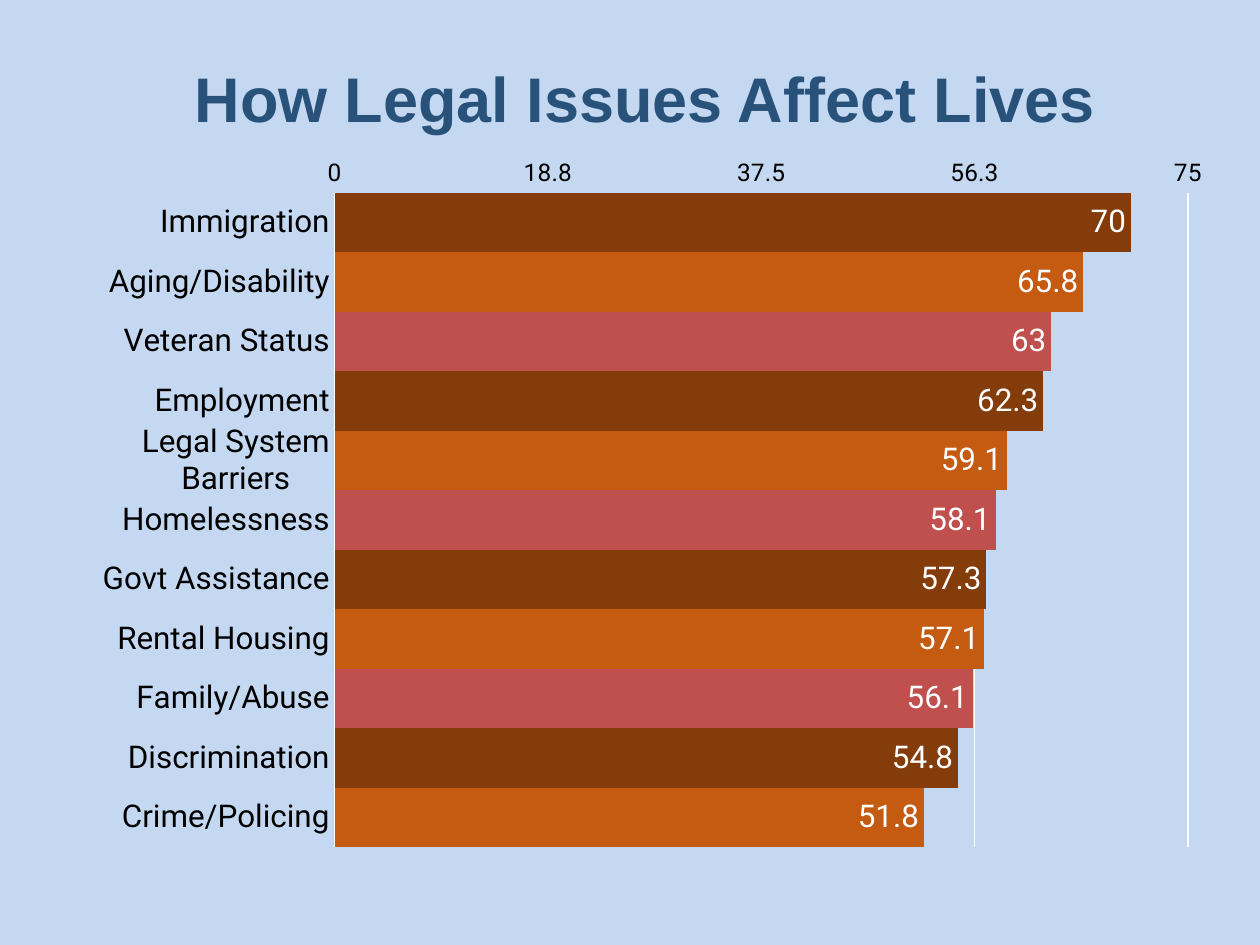
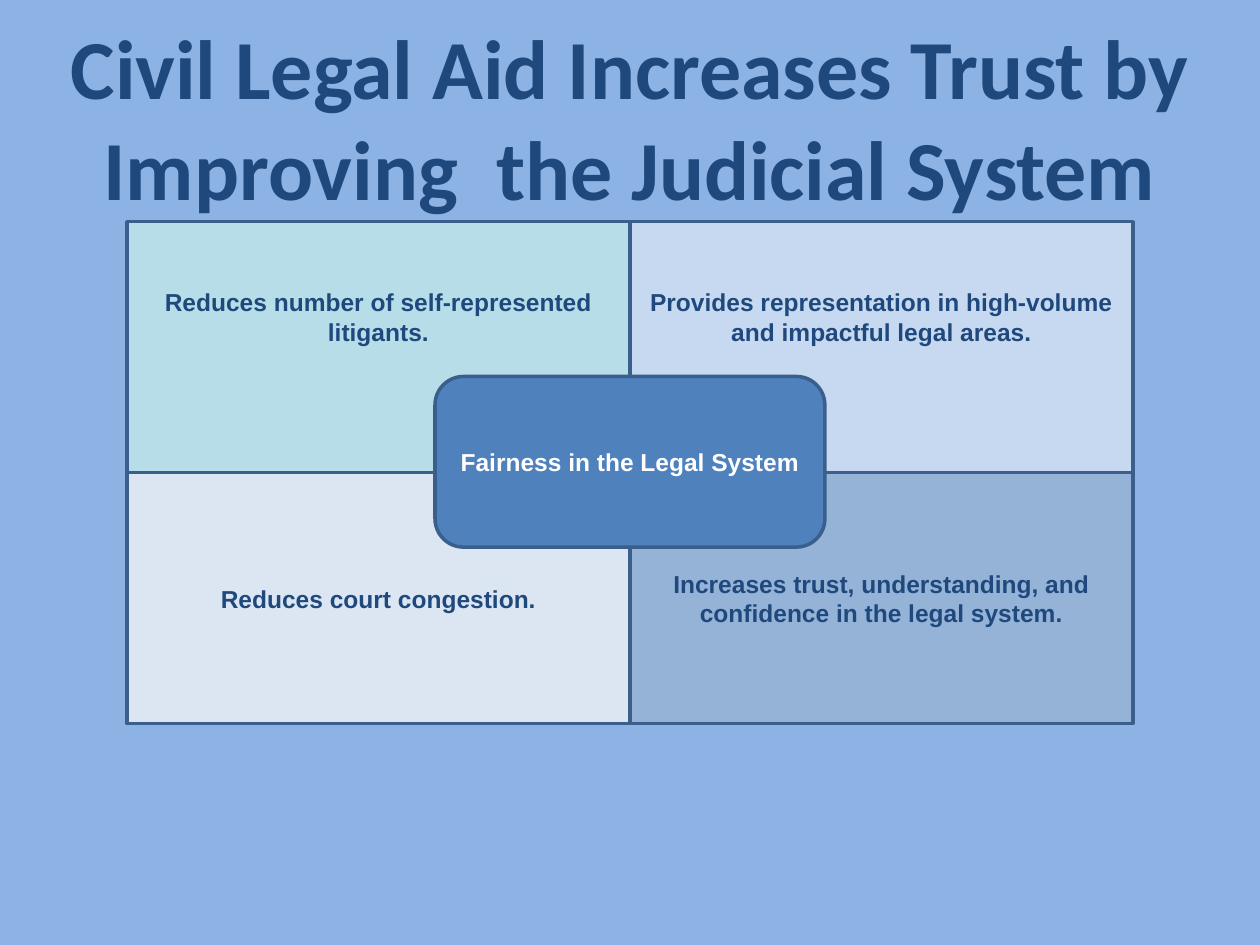
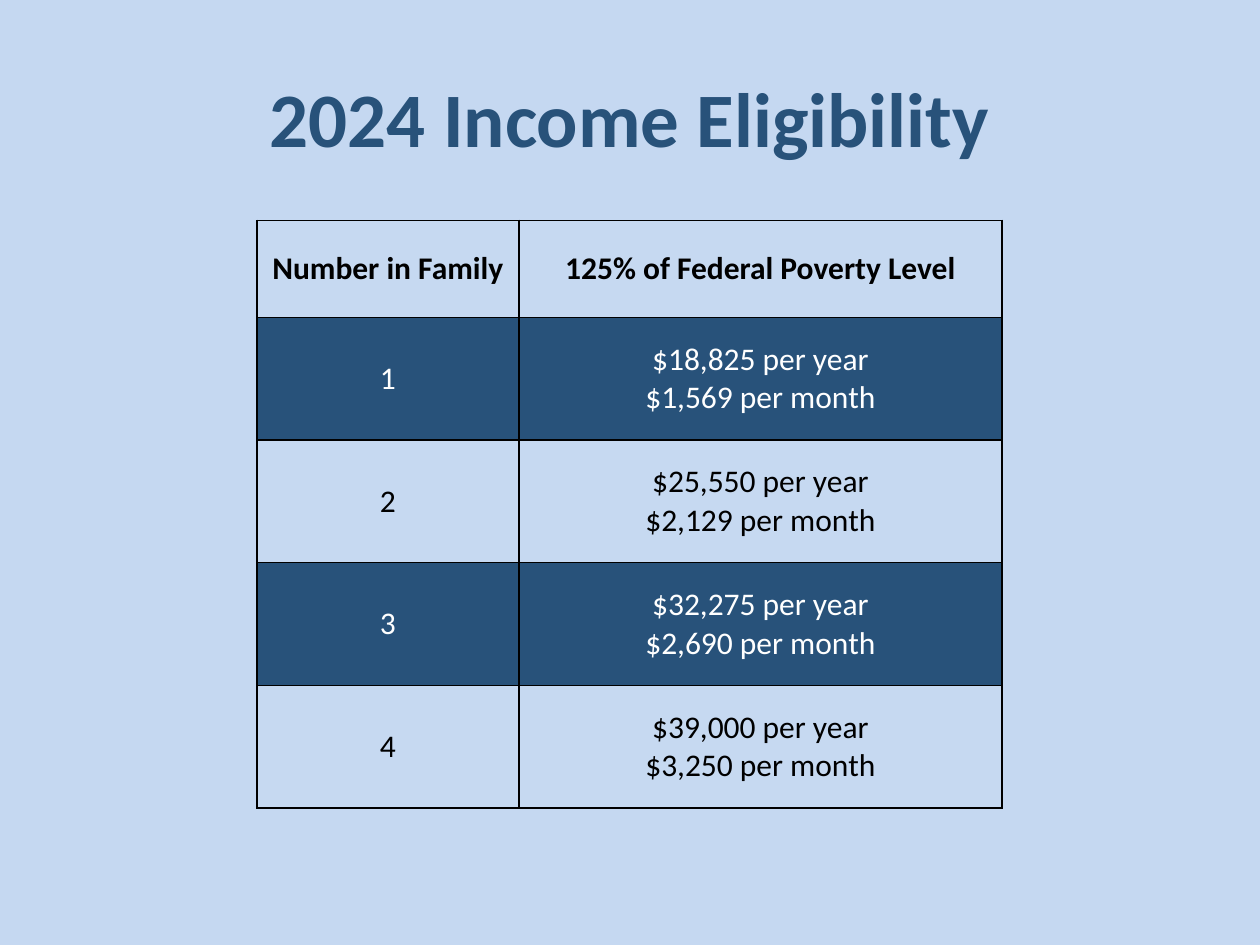
from dataclasses import dataclass

import pptx
import pptx.util
from lxml import etree
from pptx.chart.data import CategoryChartData
from pptx.dml.color import RGBColor
from pptx.enum.chart import XL_AXIS_CROSSES, XL_CHART_TYPE, XL_LABEL_POSITION, XL_TICK_MARK
from pptx.enum.shapes import MSO_SHAPE
from pptx.enum.text import MSO_ANCHOR, MSO_AUTO_SIZE, PP_ALIGN
from pptx.oxml.ns import qn
from pptx.util import Cm, Pt


@dataclass(frozen=True)
class Theme:
    pale: str = "C5D8F1"
    sky: str = "8CB3E3"
    navy: str = "28527A"
    ink: str = "1F497D"
    black: str = "000000"
    white: str = "FFFFFF"
    outline: str = "3A5F8C"
    center: str = "4F81BD"
    row: str = "C6D9F1"
    bars: tuple = ("843C0B", "C55A11", "C0504D")
    heading: str = "Arial"
    body: str = "Calibri"
    chart: str = "Roboto"
    label: int = 18
    tick: int = 14
    quadrant: int = 14


T = Theme()

ISSUES = [
    ("Immigration", 70),
    ("Aging/Disability", 65.8),
    ("Veteran Status", 63),
    ("Employment", 62.3),
    ("Legal System Barriers", 59.1),
    ("Homelessness", 58.1),
    ("Govt Assistance", 57.3),
    ("Rental Housing", 57.1),
    ("Family/Abuse", 56.1),
    ("Discrimination", 54.8),
    ("Crime/Policing", 51.8),
]
PLOT_AREA = {"x": 0.236, "y": 0.04, "w": 0.755, "h": 0.895}

# Text and fill, row by row
QUADRANTS = [
    [("Reduces number of self-represented litigants.", "B7DEE8"),
     ("Provides representation in high-volume and impactful legal areas.", "C6D9F1")],
    [("Reduces court congestion.", "DCE6F2"),
     ("Increases trust, understanding, and confidence in the legal system.", "95B3D7")],
]
CENTER = "Fairness in the Legal System"

INCOME = [
    ("Number in Family", "125% of Federal Poverty Level"),
    ("1", "$18,825 per year\n$1,569 per month"),
    ("2", "$25,550 per year\n$2,129 per month"),
    ("3", "$32,275 per year\n$2,690 per month"),
    ("4", "$39,000 per year\n$3,250 per month"),
]


def rgb(color):
    return RGBColor.from_string(color)


def set_font(font, name, size, color, bold=False):
    font.name, font.size, font.bold = name, Pt(size), bold
    font.color.rgb = rgb(color)


def write(tf, text, *, font, size, color, bold=False):
    """Fill a text frame with centred text, one paragraph per line."""
    for i, line in enumerate(text.split("\n")):
        p = tf.add_paragraph() if i else tf.paragraphs[0]
        p.alignment = PP_ALIGN.CENTER
        r = p.add_run()
        r.text = line
        set_font(r.font, font, size, color, bold)


def add_slide(prs, title, background, box=(0, 0.76, 25.4, 3.18), **fmt):
    s = prs.slides.add_slide(prs.slide_layouts[5])
    s.background.fill.solid()
    s.background.fill.fore_color.rgb = rgb(background)
    sp = s.shapes.title
    sp.left, sp.top, sp.width, sp.height = map(Cm, box)
    tf = sp.text_frame
    tf.word_wrap = True
    tf.auto_size = MSO_AUTO_SIZE.NONE
    tf.vertical_anchor = MSO_ANCHOR.MIDDLE
    write(tf, title, bold=True, **fmt)
    return s


def fix_plot_area(chart):
    """Place the inner plot area by fractions of the chart."""
    plot_area = chart._chartSpace.chart.plotArea
    for old in plot_area.findall(qn("c:layout")):
        plot_area.remove(old)
    layout = etree.Element(qn("c:layout"))
    manual = etree.SubElement(layout, qn("c:manualLayout"))
    settings = {"layoutTarget": "inner", "xMode": "edge", "yMode": "edge", **PLOT_AREA}
    for tag, val in settings.items():
        etree.SubElement(manual, qn(f"c:{tag}")).set("val", str(val))
    plot_area.insert(0, layout)


def add_issue_chart(s):
    data = CategoryChartData()
    data.categories = [name for name, _ in ISSUES]
    data.add_series("Series 1", [value for _, value in ISSUES])
    chart = s.shapes.add_chart(XL_CHART_TYPE.BAR_CLUSTERED, Cm(1.37), Cm(3.18),
                               Cm(22.86), Cm(14.86), data).chart
    chart.has_legend = chart.has_title = False
    set_font(chart.font, T.chart, T.label, T.black)
    fix_plot_area(chart)

    cat = chart.category_axis
    cat.reverse_order = True
    cat.crosses = XL_AXIS_CROSSES.MAXIMUM
    val = chart.value_axis
    val.minimum_scale, val.maximum_scale, val.major_unit = 0, 75, 18.75
    val.tick_labels.number_format = "0.#"
    val.tick_labels.number_format_is_linked = False
    val.format.line.fill.background()
    for axis, size in ((cat, T.label), (val, T.tick)):
        axis.major_tick_mark = axis.minor_tick_mark = XL_TICK_MARK.NONE
        set_font(axis.tick_labels.font, T.chart, size, T.black)
    for line in (cat.format.line, val.major_gridlines.format.line):
        line.color.rgb = rgb(T.white)
        line.width = Pt(1)

    plot = chart.plots[0]
    plot.gap_width = 0
    plot.vary_by_categories = False
    plot.has_data_labels = True
    labels = plot.data_labels
    labels.show_value = True
    labels.position = XL_LABEL_POSITION.INSIDE_END
    labels.number_format = "General"
    labels.number_format_is_linked = False
    set_font(labels.font, T.chart, T.label, T.white)
    for i in range(len(ISSUES)):
        fill = plot.series[0].points[i].format.fill
        fill.solid()
        fill.fore_color.rgb = rgb(T.bars[i % len(T.bars)])


def add_panel(s, kind, box, text, fill, color):
    sp = s.shapes.add_shape(kind, *map(Cm, box))
    sp.shadow.inherit = False
    sp.fill.solid()
    sp.fill.fore_color.rgb = rgb(fill)
    sp.line.color.rgb = rgb(T.outline)
    sp.line.width = Pt(2)
    tf = sp.text_frame
    tf.word_wrap = True
    tf.vertical_anchor = MSO_ANCHOR.MIDDLE
    write(tf, text, font=T.heading, size=T.quadrant, color=color, bold=True)
    return sp


def add_quadrants(s):
    left, top, width, height = 2.56, 4.47, 10.14, 5.06
    for i, row in enumerate(QUADRANTS):
        for j, (text, fill) in enumerate(row):
            box = (left + j * width, top + i * height, width, height)
            sp = add_panel(s, MSO_SHAPE.RECTANGLE, box, text, fill, T.ink)
            if i == 0:
                sp.text_frame.vertical_anchor = MSO_ANCHOR.TOP
                sp.text_frame.margin_top = Cm(1.32)
    center_w, center_h = 7.86, 3.44
    box = (left + width - center_w / 2, 7.59, center_w, center_h)
    add_panel(s, MSO_SHAPE.ROUNDED_RECTANGLE, box, CENTER, T.center, T.white)


def add_borders(cell):
    tc_pr = cell._tc.get_or_add_tcPr()
    for i, side in enumerate(("lnL", "lnR", "lnT", "lnB")):
        ln = etree.Element(qn(f"a:{side}"), w=str(Pt(1)))
        fill = etree.SubElement(ln, qn("a:solidFill"))
        etree.SubElement(fill, qn("a:srgbClr")).set("val", T.black)
        tc_pr.insert(i, ln)


def add_income_table(s):
    widths, heights = (5.28, 9.74), (1.96, 2.47, 2.47, 2.48, 2.47)
    table = s.shapes.add_table(len(heights), len(widths), Cm(5.18), Cm(4.44),
                               Cm(sum(widths)), Cm(sum(heights))).table
    for column, width in zip(table.columns, widths):
        column.width = Cm(width)
    for i, (texts, height) in enumerate(zip(INCOME, heights)):
        table.rows[i].height = Cm(height)
        fill, color = (T.navy, T.white) if i % 2 else (T.row, T.black)
        for j, text in enumerate(texts):
            cell = table.cell(i, j)
            cell.fill.solid()
            cell.fill.fore_color.rgb = rgb(fill)
            cell.vertical_anchor = MSO_ANCHOR.MIDDLE
            cell.margin_left = cell.margin_right = Cm(0.18)
            cell.margin_top = cell.margin_bottom = 0
            write(cell.text_frame, text, font=T.body, size=T.label, color=color, bold=i == 0)
            add_borders(cell)


def main():
    prs = pptx.Presentation()
    prs.slide_width, prs.slide_height = Cm(25.4), Cm(19.05)
    add_issue_chart(add_slide(prs, "How Legal Issues Affect Lives", T.pale,
                              box=(0.61, 1.07, 24.79, 1.8),
                              font=T.heading, size=36, color=T.navy))
    add_quadrants(add_slide(prs, "Civil Legal Aid Increases Trust by Improving  the Judicial System",
                            T.sky, font=T.body, size=48, color=T.ink))
    add_income_table(add_slide(prs, "2024 Income Eligibility", T.pale,
                               font=T.body, size=44, color=T.navy))
    prs.save("out.pptx")


if __name__ == "__main__":
    main()
